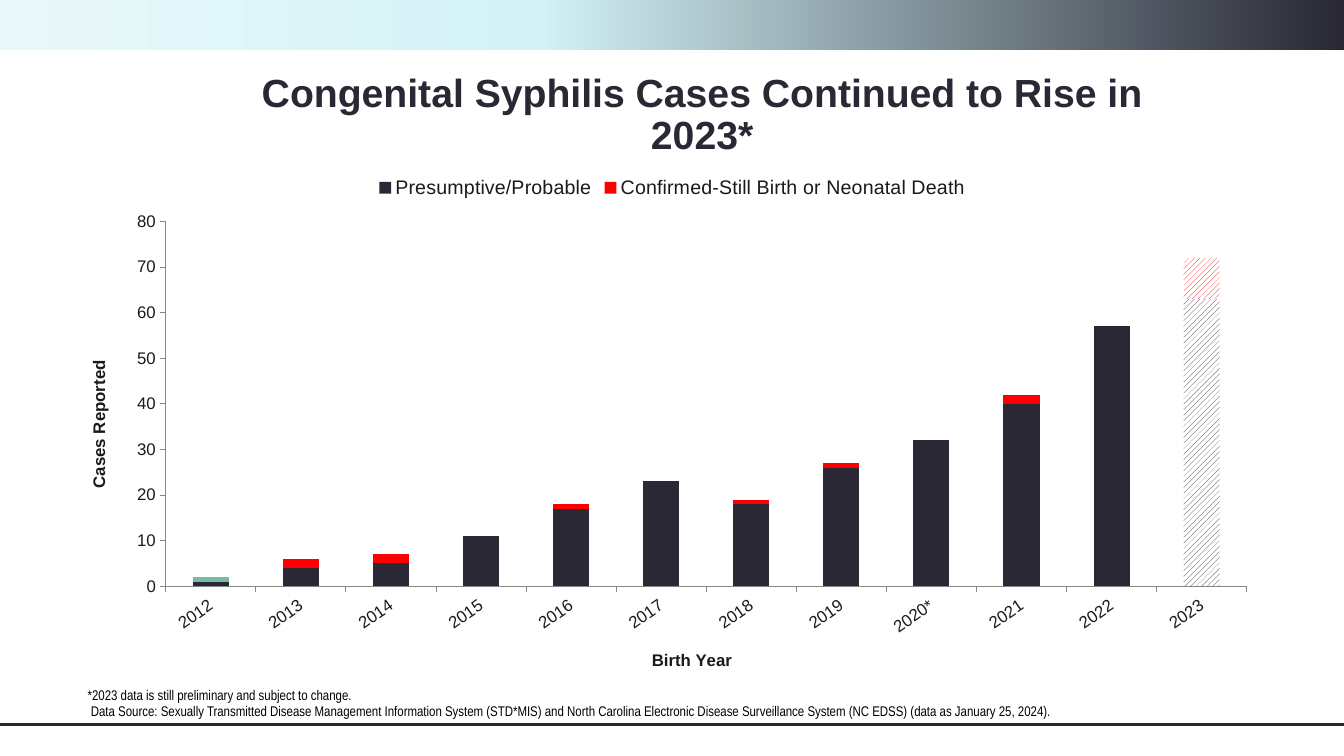
from dataclasses import dataclass

from lxml.etree import SubElement
from pptx import Presentation
from pptx.chart.chart import Chart
from pptx.chart.data import CategoryChartData
from pptx.dml.color import RGBColor
from pptx.enum.chart import XL_CHART_TYPE, XL_LEGEND_POSITION, XL_TICK_MARK
from pptx.enum.dml import MSO_PATTERN
from pptx.enum.shapes import MSO_CONNECTOR, MSO_SHAPE
from pptx.enum.text import MSO_ANCHOR, PP_ALIGN
from pptx.oxml.ns import qn
from pptx.slide import Slide
from pptx.util import Cm, Pt

INK = "292834"
CHART_TEXT = "1A1A1A"
AXIS_GREY = "868686"
WIDTH = 33.87
YEARS = ["2012", "2013", "2014", "2015", "2016", "2017",
         "2018", "2019", "2020*", "2021", "2022", "2023"]
PRELIMINARY = YEARS.index("2023")
BANNER_STOPS = [(0, INK), (60, "D3F2F6"), (100, "E9F8FA")]


@dataclass
class CaseSeries:
    name: str
    counts: list
    color: str
    in_legend: bool = True


@dataclass
class TextBlock:
    lines: list
    left: float
    top: float
    width: float
    height: float
    font: str
    size: float
    color: str
    bold: bool = False
    align: PP_ALIGN = PP_ALIGN.LEFT
    anchor: MSO_ANCHOR = MSO_ANCHOR.TOP
    line_spacing: float = 1.0


CASES = [
    CaseSeries("Presumptive/Probable",
               [1, 4, 5, 11, 17, 23, 18, 26, 32, 40, 57, 63], INK),
    CaseSeries("Series 2", [1] + [None] * 11, "75BDA7", in_legend=False),
    CaseSeries("Confirmed-Still Birth or Neonatal Death",
               [0, 2, 2, 0, 1, 0, 1, 1, 0, 2, 0, 9], "FF0000"),
]

TEXTS = [
    TextBlock(["Congenital Syphilis Cases Continued to Rise in 2023*"],
              6.1, 1.73, 23.19, 1.52, "Arial", 28, INK, bold=True,
              align=PP_ALIGN.CENTER, line_spacing=0.9),
    TextBlock(["*2023 data is still preliminary and subject to change.",
               " Data Source: Sexually Transmitted Disease Management Information "
               "System (STD*MIS) and North Carolina Electronic Disease Surveillance "
               "System (NC EDSS) (data as January 25, 2024)."],
              1.96, 17.35, 29.59, 0.91, "Arial Narrow", 10, "000000",
              anchor=MSO_ANCHOR.BOTTOM),
]


def rgb(value: str) -> RGBColor:
    return RGBColor.from_string(value)


def add_banner(slide: Slide) -> None:
    banner = slide.shapes.add_shape(MSO_SHAPE.RECTANGLE, 0, 0, Cm(WIDTH), Cm(1.27))
    banner.shadow.inherit = False
    banner.line.fill.background()
    banner.fill.gradient()
    banner.fill.gradient_angle = 180
    stops = next(banner.element.iter(qn("a:gsLst")))
    for stop in list(stops):
        stops.remove(stop)
    for percent, color in BANNER_STOPS:
        stop = SubElement(stops, qn("a:gs"), pos=str(percent * 1000))
        SubElement(stop, qn("a:srgbClr"), val=color)


def add_footer_rule(slide: Slide) -> None:
    rule = slide.shapes.add_connector(
        MSO_CONNECTOR.STRAIGHT, 0, Cm(18.26), Cm(WIDTH), Cm(18.26))
    rule.line.color.rgb = rgb(INK)
    rule.line.width = Pt(1.75)
    SubElement(rule.element.spPr, qn("a:effectLst"))


def add_text(slide: Slide, block: TextBlock) -> None:
    frame = slide.shapes.add_textbox(
        Cm(block.left), Cm(block.top), Cm(block.width), Cm(block.height)).text_frame
    frame.word_wrap = True
    frame.vertical_anchor = block.anchor
    for index, line in enumerate(block.lines):
        paragraph = frame.add_paragraph() if index else frame.paragraphs[0]
        paragraph.alignment = block.align
        paragraph.line_spacing = block.line_spacing
        run = paragraph.add_run()
        run.text = line
        run.font.name = block.font
        run.font.size = Pt(block.size)
        run.font.bold = block.bold
        run.font.color.rgb = rgb(block.color)


def style_axis(axis, title: str) -> None:
    axis.has_major_gridlines = False
    axis.major_tick_mark = XL_TICK_MARK.OUTSIDE
    axis.minor_tick_mark = XL_TICK_MARK.NONE
    axis.format.line.color.rgb = rgb(AXIS_GREY)
    axis.format.line.width = Pt(0.75)
    run = axis.axis_title.text_frame.paragraphs[0].add_run()
    run.text = title
    run.font.name = "Arial"
    run.font.size = Pt(12)
    run.font.bold = True
    run.font.color.rgb = rgb(CHART_TEXT)


def place_plot(chart: Chart, x: float, y: float, w: float, h: float) -> None:
    """Fix the inner plot area, in fractions of the chart."""
    area = chart.element.chart.plotArea
    layout = area.find(qn("c:layout"))
    if layout is None:
        layout = SubElement(area, qn("c:layout"))
        area.insert(0, layout)
    manual = SubElement(layout, qn("c:manualLayout"))
    settings = {"layoutTarget": "inner", "xMode": "edge", "yMode": "edge",
                "x": x, "y": y, "w": w, "h": h}
    for tag, value in settings.items():
        SubElement(manual, qn(f"c:{tag}"), val=str(value))


def add_legend(chart: Chart) -> None:
    chart.has_legend = True
    legend = chart.legend
    legend.position = XL_LEGEND_POSITION.TOP
    legend.include_in_layout = False
    legend.font.size = Pt(14)
    legend.font.name = "Arial"
    legend.font.color.rgb = rgb(CHART_TEXT)
    position = chart.element.find(f".//{qn('c:legendPos')}")
    for index, series in enumerate(CASES):
        if not series.in_legend:
            entry = SubElement(position.getparent(), qn("c:legendEntry"))
            SubElement(entry, qn("c:idx"), val=str(index))
            SubElement(entry, qn("c:delete"), val="1")
            position.addnext(entry)


def add_case_chart(slide: Slide) -> None:
    data = CategoryChartData()
    data.categories = YEARS
    for case in CASES:
        data.add_series(case.name, case.counts)
    chart = slide.shapes.add_chart(
        XL_CHART_TYPE.COLUMN_STACKED, Cm(1.96), Cm(4.17), Cm(29.97), Cm(13.21), data).chart
    chart.has_title = False
    chart.font.name = "Arial"
    chart.font.size = Pt(12)
    chart.font.color.rgb = rgb(CHART_TEXT)

    plot = chart.plots[0]
    plot.vary_by_categories = False
    plot.gap_width = 150
    plot.overlap = 100
    for series, case in zip(plot.series, CASES):
        series.format.fill.solid()
        series.format.fill.fore_color.rgb = rgb(case.color)
        if case.counts[PRELIMINARY] is not None:
            hatch = series.points[PRELIMINARY].format.fill
            hatch.patterned()
            hatch.pattern = MSO_PATTERN.WIDE_UPWARD_DIAGONAL
            hatch.fore_color.rgb = rgb(case.color)
            hatch.back_color.rgb = rgb("FFFFFF")

    style_axis(chart.category_axis, "Birth Year")
    style_axis(chart.value_axis, "Cases Reported")
    chart.value_axis.minimum_scale = 0
    chart.value_axis.maximum_scale = 80
    chart.value_axis.major_unit = 10
    year_labels = chart.category_axis.tick_labels
    year_labels.font.size = Pt(12)
    label_body = chart.element.find(f".//{qn('c:catAx')}/{qn('c:txPr')}/{qn('a:bodyPr')}")
    label_body.set("rot", str(-35 * 60000))
    place_plot(chart, 0.074, 0.107, 0.909, 0.696)
    add_legend(chart)


def main() -> None:
    deck = Presentation()
    deck.slide_width = Cm(WIDTH)
    deck.slide_height = Cm(19.05)
    slide = deck.slides.add_slide(deck.slide_layouts[6])
    add_banner(slide)
    add_footer_rule(slide)
    for block in TEXTS:
        add_text(slide, block)
    add_case_chart(slide)
    deck.save("out.pptx")


if __name__ == "__main__":
    main()
